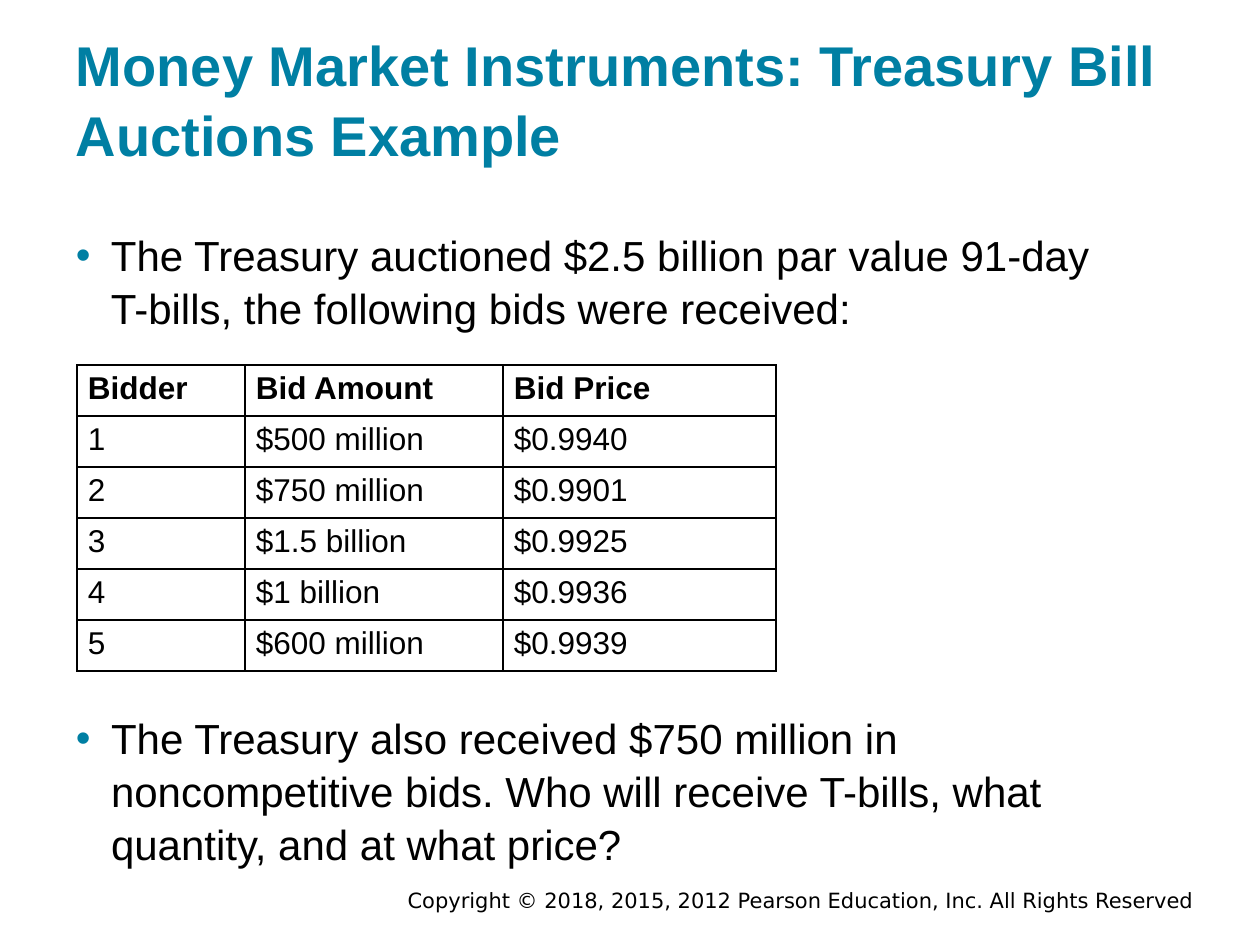
from lxml import etree
from pptx import Presentation
from pptx import util as u
from pptx.dml.color import RGBColor
from pptx.enum import text
from pptx.oxml.ns import qn

SCALE = 914400 / 126  # EMU per px
COLORS = {"teal": "007FA3", "black": "000000", "white": "FFFFFF"}


def px(length):
    return u.Emu(round(length * SCALE))


class SlideBuilder:
    font = "Arial"

    def __init__(self, page):
        self.page = page

    def style(self, para, size, color="black", bold=False, font=None):
        for span in para.runs:
            span.font.name = font or self.font
            span.font.size = u.Pt(size)
            span.font.bold = bold
            span.font.color.rgb = RGBColor.from_string(COLORS[color])

    def text(self, words, left, top, width, height, size, inset=(13, 13),
             anchor=text.MSO_ANCHOR.TOP, align=text.PP_ALIGN.LEFT, spacing=None, **look):
        box = self.page.shapes.add_textbox(px(left), px(top), px(width), px(height))
        frame = box.text_frame
        frame.word_wrap = True
        frame.vertical_anchor = anchor
        frame.margin_left = frame.margin_right = px(inset[0])
        frame.margin_top = frame.margin_bottom = px(inset[1])
        frame.text = words
        para = frame.paragraphs[0]
        para.alignment = align
        para.line_spacing = spacing
        self.style(para, size, **look)
        return para

    def bullet(self, words, left, top, width, height):
        para = self.text(words, left, top, width, height, 24, spacing=1.05)
        props = para._p.get_or_add_pPr()
        props.set("marL", str(px(35)))
        props.set("indent", str(-px(35)))
        color = etree.SubElement(props, qn("a:buClr"))
        etree.SubElement(color, qn("a:srgbClr"), val=COLORS["teal"])
        etree.SubElement(props, qn("a:buFont"), typeface=self.font)
        etree.SubElement(props, qn("a:buChar"), char="•")

    def border(self, cell):
        props = cell._tc.get_or_add_tcPr()
        for place, side in enumerate(("lnL", "lnR", "lnT", "lnB")):
            line = etree.Element(qn(f"a:{side}"), w=str(u.Pt(1)))
            fill = etree.SubElement(line, qn("a:solidFill"))
            etree.SubElement(fill, qn("a:srgbClr"), val=COLORS["black"])
            props.insert(place, line)

    def table(self, rows, left, top, widths, row_height):
        frame = self.page.shapes.add_table(len(rows), len(widths), px(left), px(top),
                                           px(sum(widths)), px(row_height * len(rows)))
        grid = frame.table
        for column, width in zip(grid.columns, widths):
            column.width = px(width)
        for r, values in enumerate(rows):
            grid.rows[r].height = px(row_height)
            for c, value in enumerate(values):
                cell = grid.cell(r, c)
                cell.fill.solid()
                cell.fill.fore_color.rgb = RGBColor.from_string(COLORS["white"])
                cell.margin_left = cell.margin_right = px(11)
                cell.margin_top = cell.margin_bottom = px(6)
                cell.text = value
                self.style(cell.text_frame.paragraphs[0], 18, bold=r == 0)
                self.border(cell)


def main():
    deck = Presentation()
    deck.slide_width, deck.slide_height = px(1260), px(945)
    builder = SlideBuilder(deck.slides.add_slide(deck.slide_layouts[6]))

    # Footer
    builder.text("Copyright © 2018, 2015, 2012 Pearson Education, Inc. All Rights Reserved",
                 220, 886, 987, 28, 12, inset=(13, 6), anchor=text.MSO_ANCHOR.MIDDLE,
                 align=text.PP_ALIGN.RIGHT, font="DejaVu Sans")

    # Title
    builder.text("Money Market Instruments: Treasury Bill Auctions Example",
                 63, 30, 1134, 151, 32, anchor=text.MSO_ANCHOR.BOTTOM, spacing=1.05,
                 color="teal", bold=True)

    # Auction and bids
    builder.bullet("The Treasury auctioned $2.5 billion par value 91-day T-bills, "
                   "the following bids were received:", 63, 214, 1057, 121)
    bids = [("Bidder", "Bid Amount", "Bid Price"),
            ("1", "$500 million", "$0.9940"),
            ("2", "$750 million", "$0.9901"),
            ("3", "$1.5 billion", "$0.9925"),
            ("4", "$1 billion", "$0.9936"),
            ("5", "$600 million", "$0.9939")]
    builder.table(bids, 77, 365, (168, 258, 273), 51)

    # Question
    builder.bullet("The Treasury also received $750 million in noncompetitive bids. "
                   "Who will receive T-bills, what quantity, and at what price?",
                   63, 697, 1037, 175)

    deck.save("out.pptx")


if __name__ == "__main__":
    main()
